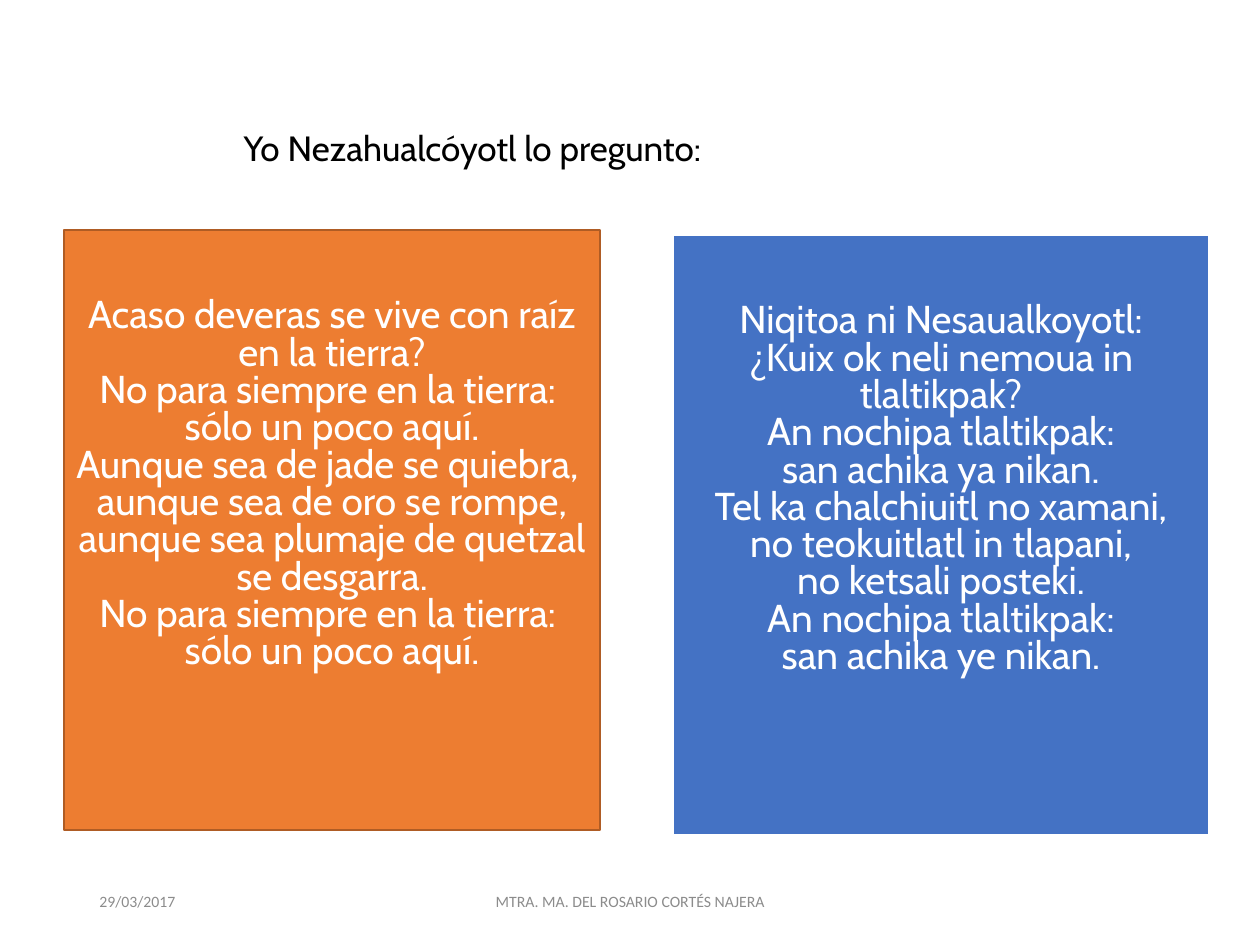
from pptx import Presentation
from pptx.dml.color import RGBColor
from pptx.enum.shapes import MSO_SHAPE
from pptx.enum.text import MSO_ANCHOR, MSO_AUTO_SIZE, PP_ALIGN
from pptx.util import Emu, Pt

PX = 914400 / 126  # EMU in one px


def px(*lengths):
    return [Emu(round(length * PX)) for length in lengths]


def style(para, font, size, color, align, spacing=1.0):
    para.alignment = align
    para.line_spacing = spacing
    para.font.name = font
    para.font.size = Pt(size)
    para.font.color.rgb = RGBColor.from_string(color)


deck = Presentation()
deck.slide_width, deck.slide_height = px(1260, 945)
page = deck.slides.add_slide(deck.slide_layouts[5])

# Title
title = page.shapes.title
title.left, title.top, title.width, title.height = px(231, 59, 556, 183)
frame = title.text_frame
frame.text = "Yo Nezahualcóyotl lo pregunto: "
frame.word_wrap = True
frame.auto_size = MSO_AUTO_SIZE.NONE
frame.vertical_anchor = MSO_ANCHOR.MIDDLE
style(frame.paragraphs[0], "Cabin", 20, "000000", PP_ALIGN.LEFT, 0.9)

# The poem in Nahuatl and in Spanish
nahuatl = """Niqitoa ni Nesaualkoyotl:
¿Kuix ok neli nemoua in tlaltikpak?
An nochipa tlaltikpak:
san achika ya nikan.
Tel ka chalchiuitl no xamani,
no teokuitlatl in tlapani,
no ketsali posteki.
An nochipa tlaltikpak:
san achika ye nikan."""
spanish = """Acaso deveras se vive con raíz en la tierra?
No para siempre en la tierra: 
sólo un poco aquí.
Aunque sea de jade se quiebra, 
aunque sea de oro se rompe,
aunque sea plumaje de quetzal se desgarra.
No para siempre en la tierra: 
sólo un poco aquí."""

for left, top, fill, line, weight, poem in [
    (673, 235, "4472C4", "FFFFFF", 1.5, nahuatl),
    (64, 230, "ED7D31", "AF5C24", 1, spanish),
]:
    panel = page.shapes.add_shape(MSO_SHAPE.RECTANGLE, *px(left, top, 536, 600))
    panel.shadow.inherit = False
    panel.fill.solid()
    panel.fill.fore_color.rgb = RGBColor.from_string(fill)
    panel.line.color.rgb = RGBColor.from_string(line)
    panel.line.width = Pt(weight)
    frame = panel.text_frame
    frame.word_wrap = True
    frame.vertical_anchor = MSO_ANCHOR.TOP
    frame.margin_top = px(69)[0]
    para = frame.paragraphs[0]
    para.text = poem  # each newline becomes a line break
    style(para, "Cabin", 22.2, "FFFFFF", PP_ALIGN.CENTER, 0.8)

# Date and footer
for left, width, align, text in [
    (87, 284, PP_ALIGN.LEFT, "29/03/2017"),
    (417, 426, PP_ALIGN.CENTER, "MTRA. MA. DEL ROSARIO CORTÉS NAJERA"),
]:
    box = page.shapes.add_textbox(*px(left, 876, width, 50))
    frame = box.text_frame
    frame.word_wrap = True
    frame.vertical_anchor = MSO_ANCHOR.MIDDLE
    frame.text = text
    style(frame.paragraphs[0], "Calibri", 9, "8C8C8C", align)

deck.save("out.pptx")
